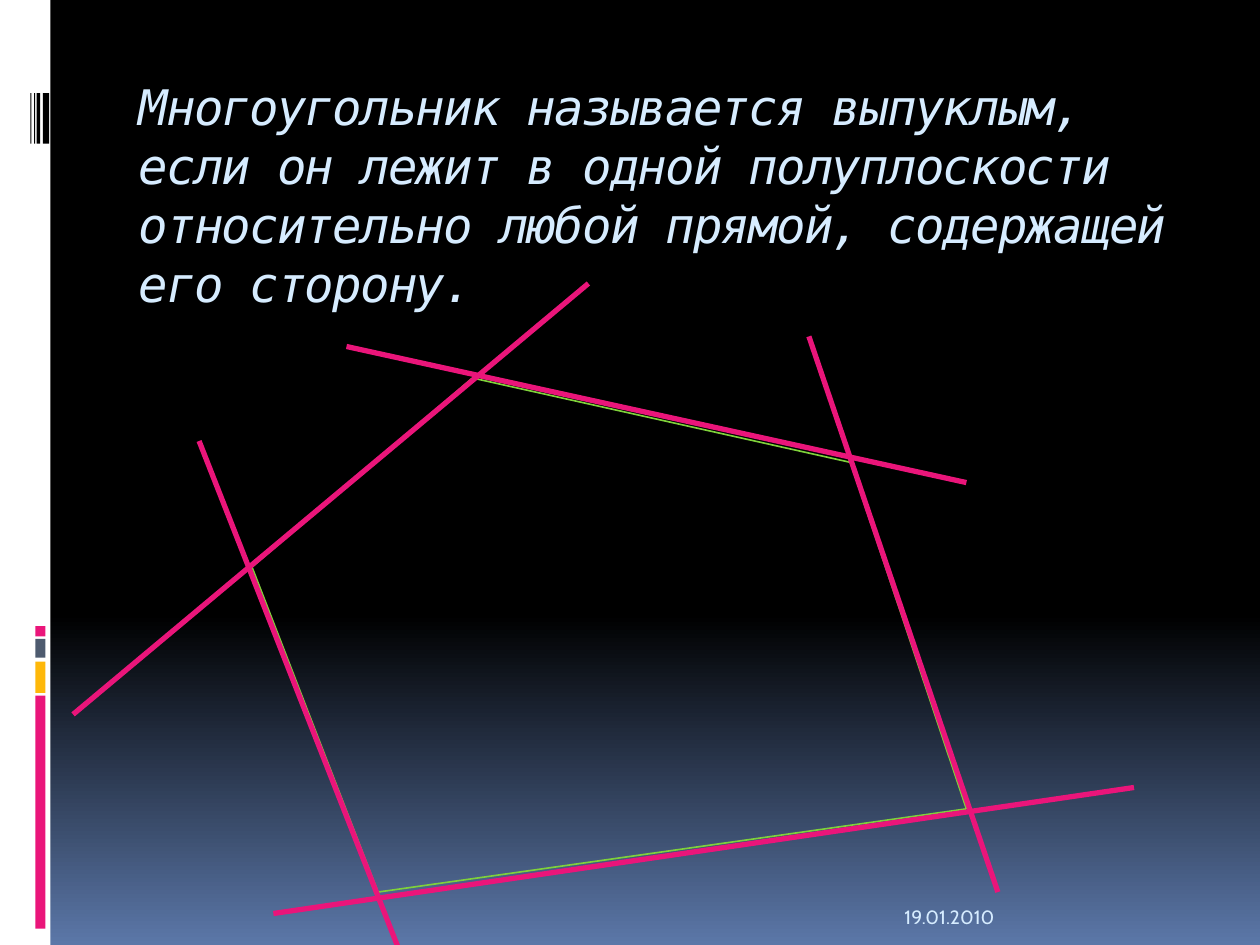
"""Build a slide that defines a convex polygon and extends its sides to lines."""
from lxml import etree
from pptx import Presentation
from pptx.dml.color import RGBColor
from pptx.enum.shapes import MSO_CONNECTOR, MSO_SHAPE
from pptx.enum.text import MSO_ANCHOR, PP_ALIGN
from pptx.oxml.ns import qn
from pptx.util import Inches, Pt

RECT = MSO_SHAPE.RECTANGLE
STRAIGHT = MSO_CONNECTOR.STRAIGHT
TOP, BOTTOM = MSO_ANCHOR.TOP, MSO_ANCHOR.BOTTOM
LEFT = PP_ALIGN.LEFT
TITLE_ONLY = 5

COLORS = {
    "black": "000000", "white": "FFFFFF", "blue": "5B77A8", "pink": "EA157A",
    "amber": "FEB80A", "slate": "4E5B6F", "text": "D6ECFF", "green": "7FD13B",
}
TITLE = ("Многоугольник называется выпуклым, если он лежит в одной "
         "полуплоскости относительно любой прямой, содержащей его сторону.")
BARS = [(5.52, 1.85, "pink"), (5.25, 0.25, "amber"),
        (5.07, 0.15, "slate"), (4.97, 0.08, "pink")]
STRIPES = [(0.34, 0.05), (0.29, 0.03), (0.27, 0.01), (0.24, 0.01)]
VERTICES = [(2, 4.5), (3.75, 3), (6.75, 3.67), (7.67, 6.42), (3, 7.08)]
SIDE_LINES = [
    ((0.58, 5.67), (4.67, 2.25)),
    ((2.75, 2.75), (7.67, 3.83)),
    ((6.42, 2.67), (7.92, 7.08)),
    ((9, 6.25), (2.17, 7.25)),
    ((1.58, 3.5), (3.25, 7.75)),
]


def rgb(name):
    return RGBColor.from_string(COLORS[name])


def write(tf, text, font, size, color="text", italic=False, spacing=0,
          anchor=TOP):
    tf.word_wrap = True
    tf.vertical_anchor = anchor
    p = tf.paragraphs[0]
    p.alignment = LEFT
    r = p.add_run()
    r.text = text
    r.font.name = font
    r.font.size = Pt(size)
    r.font.italic = italic
    r.font.color.rgb = rgb(color)
    if spacing:
        r.font._element.set("spc", str(spacing * 100))


class SlideBuilder:
    def __init__(self, prs):
        self.s = prs.slides.add_slide(prs.slide_layouts[TITLE_ONLY])
        self.title_font = "DejaVu Sans Mono"
        self.body_font = "Cabin"

    def background(self, start, end, position):
        fill = self.s.background.fill
        fill.gradient()
        fill.gradient_angle = 270
        for stop, color, at in zip(fill.gradient_stops, (start, end), (position, 1)):
            stop.color.rgb = rgb(color)
            stop.position = at

    def rect(self, x, y, w, h, color):
        sp = self.s.shapes.add_shape(RECT, Inches(x), Inches(y), Inches(w), Inches(h))
        sp.shadow.inherit = False
        sp.fill.solid()
        sp.fill.fore_color.rgb = rgb(color)
        sp.line.fill.background()

    def title(self, text, x, y, w, h):
        sp = self.s.shapes.title
        sp.left, sp.top, sp.width, sp.height = map(Inches, (x, y, w, h))
        write(sp.text_frame, text, self.title_font, 28, italic=True, spacing=-1)

    def text(self, text, x, y, w, h):
        sp = self.s.shapes.add_textbox(Inches(x), Inches(y), Inches(w), Inches(h))
        write(sp.text_frame, text, self.body_font, 11, anchor=BOTTOM)

    def line(self, start, end, color, width):
        sp = self.s.shapes.add_connector(STRAIGHT, *map(Inches, (*start, *end)))
        sp.line.color.rgb = rgb(color)
        sp.line.width = Pt(width)
        etree.SubElement(sp._element.spPr, qn("a:effectLst"))


def main():
    prs = Presentation()
    prs.slide_width, prs.slide_height = Inches(10), Inches(7.5)
    slide = SlideBuilder(prs)
    slide.background("black", "blue", 0.65)
    slide.rect(0, 0, 0.4, 7.5, "white")
    for y, h, color in BARS:
        slide.rect(0.28, y, 0.08, h, color)
    for x, w in STRIPES:
        slide.rect(x, 0.74, w, 0.4, "black")
    slide.title(TITLE, 1, 0.56, 8.5, 1)
    slide.text("19.01.2010", 7.08, 7.02, 2.33, 0.4)
    for start, end in zip(VERTICES, VERTICES[1:] + VERTICES[:1]):
        slide.line(start, end, "green", 0.94)
    for start, end in SIDE_LINES:
        slide.line(start, end, "pink", 3)
    prs.save("out.pptx")


if __name__ == "__main__":
    main()
